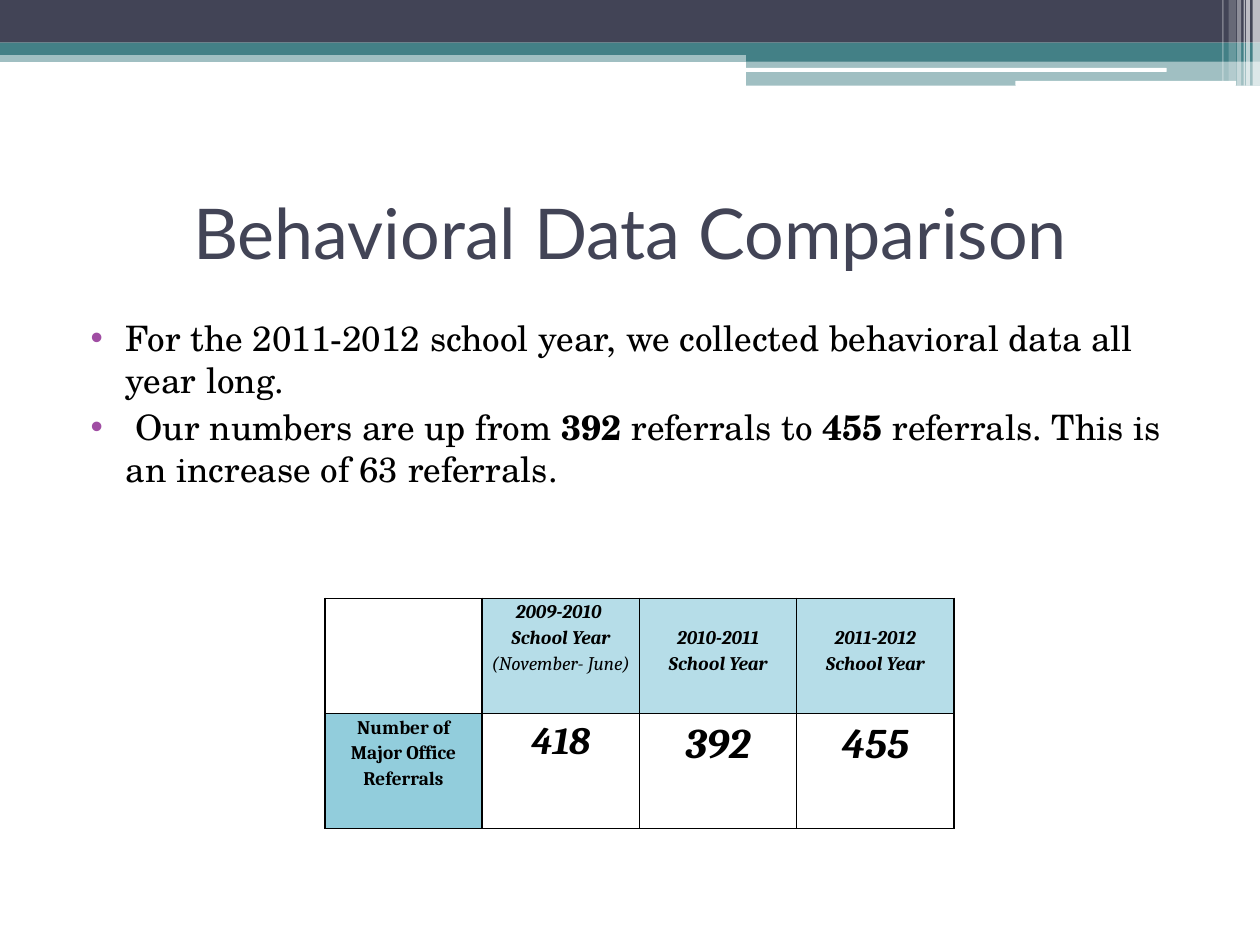
from lxml.etree import SubElement
from pptx import Presentation
from pptx.dml.color import RGBColor
from pptx.enum.shapes import MSO_SHAPE
from pptx.enum.text import MSO_ANCHOR, PP_ALIGN
from pptx.oxml.ns import qn
from pptx.util import Cm, Pt


def paint(color_format, color, opacity=100):
    color_format.rgb = RGBColor.from_string(color)
    if opacity < 100:
        color_element = color_format._xFill.find(qn("a:srgbClr"))
        SubElement(color_element, qn("a:alpha"), val=str(opacity * 1000))


def add_run(paragraph, text, color, **font_format):
    run = paragraph.add_run()
    run.text = text
    for name, value in font_format.items():
        setattr(run.font, name, value)
    run.font.fill.solid()
    paint(run.font.fill.fore_color, color)


presentation = Presentation()
presentation.slide_width = Cm(25.4)
presentation.slide_height = Cm(19.05)
slide = presentation.slides.add_slide(presentation.slide_layouts[6])

NAVY, TEAL, WHITE, BLACK = "424456", "438086", "FFFFFF", "000000"
bar, rounded = MSO_SHAPE.RECTANGLE, MSO_SHAPE.ROUNDED_RECTANGLE
banner = [
    (bar, 0, 1.02, 25.4, 0.23, TEAL, 50),
    (bar, 0, 0, 25.4, 0.86, NAVY, 100),
    (bar, 0, 0.86, 25.4, 0.25, TEAL, 100),
    (bar, 15.04, 0.99, 10.36, 0.25, TEAL, 100),
    (bar, 15.04, 1.22, 10.36, 0.51, TEAL, 50),
    (rounded, 15.01, 1.37, 8.51, 0.08, WHITE, 100),
    (rounded, 20.47, 1.63, 4.45, 0.1, WHITE, 100),
]
stripes = [
    (25.25, 0.15, 1.73, 65),
    (25.12, 0.08, 1.73, 65),
    (25.07, 0.03, 1.73, 60),
    (24.94, 0.08, 1.73, 40),
    (24.77, 0.15, 1.63, 20),
    (24.64, 0.03, 1.63, 30),
]
banner += [(bar, left, 0, width, height, WHITE, opacity) for left, width, height, opacity in stripes]

for kind, left, top, width, height, color, opacity in banner:
    shape = slide.shapes.add_shape(kind, Cm(left), Cm(top), Cm(width), Cm(height))
    shape.shadow.inherit = False
    shape.line.fill.background()
    shape.fill.solid()
    paint(shape.fill.fore_color, color, opacity)

title = slide.shapes.add_textbox(Cm(1.27), Cm(3.18), Cm(22.86), Cm(2.97)).text_frame
title.word_wrap = True
title.vertical_anchor = MSO_ANCHOR.MIDDLE
title.paragraphs[0].alignment = PP_ALIGN.CENTER
add_run(title.paragraphs[0], "Behavioral Data Comparison", NAVY, name="Lato", size=Pt(40))

body = slide.shapes.add_textbox(Cm(1.27), Cm(6.25), Cm(22.43), Cm(5.18)).text_frame
body.word_wrap = True
bullets = [
    ["For the 2011-2012 school year, we collected behavioral data all year long."],
    [" Our numbers are up from ", "392", " referrals to ", "455",
     " referrals. This is an increase of 63 referrals."],
]
for index, pieces in enumerate(bullets):
    paragraph = body.add_paragraph() if index else body.paragraphs[0]
    paragraph.space_before = Pt(3)
    properties = paragraph._p.get_or_add_pPr()
    properties.set("marL", str(Cm(1.02)))
    properties.set("indent", str(Cm(-0.71)))
    bullet_color = SubElement(properties, qn("a:buClr"))
    SubElement(bullet_color, qn("a:srgbClr"), val="A04DA3")
    SubElement(properties, qn("a:buFont"), typeface="Arial")
    SubElement(properties, qn("a:buChar"), char="•")
    for piece in pieces:
        add_run(paragraph, piece, BLACK, name="TeX Gyre Schola", size=Pt(20), bold=piece.isdigit())

heading = {"size": Pt(11), "bold": True, "italic": True}
note = {**heading, "bold": False}
label = {**heading, "italic": False}
first_count = {**heading, "size": Pt(22)}
count = {**heading, "size": Pt(24)}
cells = [
    [
        (WHITE, 0, []),
        ("B6DDE8", 0, [("2009-2010 ", heading), ("School Year", heading), ("(November- June)", note)]),
        ("B6DDE8", 0.52, [("2010-2011", heading), ("School Year", heading)]),
        ("B6DDE8", 0.52, [("2011-2012", heading), ("School Year", heading)]),
    ],
    [
        ("92CDDC", 0, [("Number of", label), ("Major Office Referrals", label)]),
        (None, 0, [("418", first_count)]),
        (None, 0, [("392", count)]),
        (None, 0, [("455", count)]),
    ],
]
table = slide.shapes.add_table(2, 4, Cm(6.55), Cm(12.06), Cm(12.68), Cm(4.64)).table
table.first_row = False
table.horz_banding = False
for row_index, row in enumerate(cells):
    for column_index, (fill_color, margin_top, lines) in enumerate(row):
        cell = table.cell(row_index, column_index)
        margins = {"margin_left": 0.18, "margin_right": 0.18, "margin_top": margin_top, "margin_bottom": 0}
        for name, value in margins.items():
            setattr(cell, name, Cm(value))
        for side in ("lnL", "lnR", "lnT", "lnB"):
            border = SubElement(cell._tc.get_or_add_tcPr(), qn(f"a:{side}"), w=str(Pt(1)))
            border_fill = SubElement(border, qn("a:solidFill"))
            SubElement(border_fill, qn("a:srgbClr"), val=BLACK)
        if fill_color:
            cell.fill.solid()
            paint(cell.fill.fore_color, fill_color)
        else:
            cell.fill.background()
        for index, (text, font_format) in enumerate(lines):
            paragraph = cell.text_frame.add_paragraph() if index else cell.text_frame.paragraphs[0]
            paragraph.alignment = PP_ALIGN.CENTER
            paragraph.line_spacing = 1.15
            add_run(paragraph, text, BLACK, name="Cambria", **font_format)

presentation.save("out.pptx")
